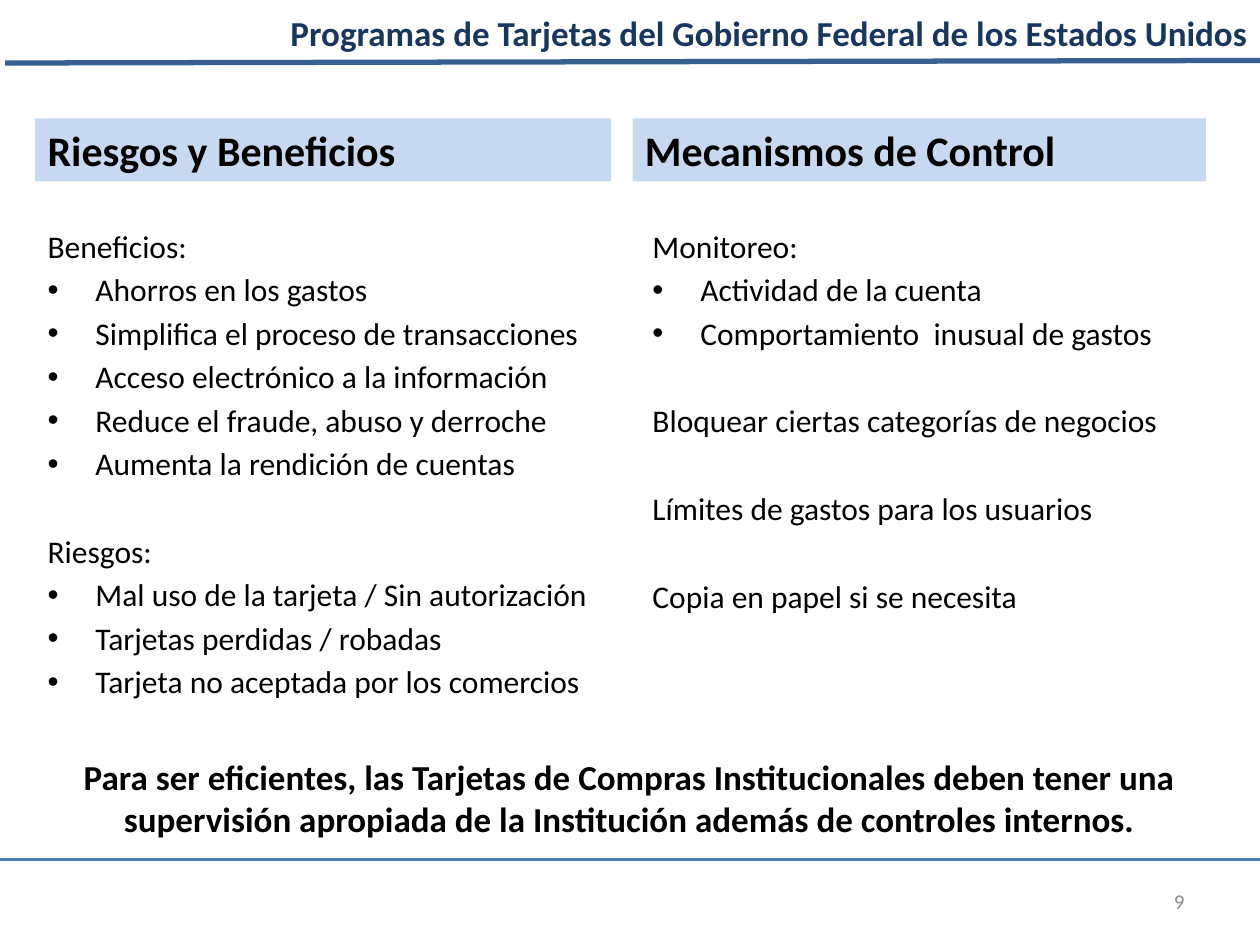
from dataclasses import dataclass

from lxml.etree import SubElement
from pptx import Presentation
from pptx.dml.color import RGBColor
from pptx.enum.shapes import MSO_CONNECTOR, MSO_SHAPE
from pptx.enum.text import MSO_ANCHOR, PP_ALIGN
from pptx.oxml.ns import qn
from pptx.util import Inches, Pt


@dataclass(frozen=True)
class Theme:
    font: str = "Calibri"
    text: str = "000000"
    title: str = "17375E"
    title_rule: str = "376092"
    footer_rule: str = "4B7EBC"
    band: str = "C6D9F1"
    page_number: str = "8C8C8C"
    heading_size: float = 24
    title_size: float = 20
    body_size: float = 18
    number_size: float = 12
    line_gap: float = 3.25
    group_gap: float = 28.45


THEME = Theme()

# Each group is an opening line and its bulleted items.
BENEFITS_AND_RISKS = [
    ("Beneficios:", [
        "Ahorros en los gastos",
        "Simplifica el proceso de transacciones",
        "Acceso electrónico a la información",
        "Reduce el fraude, abuso y derroche",
        "Aumenta la rendición de cuentas",
    ]),
    ("Riesgos:", [
        "Mal uso de la tarjeta / Sin autorización",
        "Tarjetas perdidas / robadas",
        "Tarjeta no aceptada por los comercios",
    ]),
]
CONTROLS = [
    ("Monitoreo:", ["Actividad de la cuenta", "Comportamiento  inusual de gastos"]),
    ("Bloquear ciertas categorías de negocios", []),
    ("Límites de gastos para los usuarios", []),
    ("Copia en papel si se necesita", []),
]


def add_run(paragraph, text, size, color=THEME.text, bold=False):
    run = paragraph.add_run()
    run.text = text
    run.font.name = THEME.font
    run.font.size = Pt(size)
    run.font.bold = bold
    run.font.color.rgb = RGBColor.from_string(color)


def add_text(slide, box, text, size, color=THEME.text, bold=False,
             alignment=PP_ALIGN.LEFT, anchor=MSO_ANCHOR.TOP):
    frame = slide.shapes.add_textbox(*map(Inches, box)).text_frame
    frame.word_wrap = True
    frame.vertical_anchor = anchor
    paragraph = frame.paragraphs[0]
    paragraph.alignment = alignment
    add_run(paragraph, text, size, color, bold)


def add_rule(slide, start, end, color, width):
    connector = slide.shapes.add_connector(
        MSO_CONNECTOR.STRAIGHT, *map(Inches, (*start, *end)))
    connector.line.color.rgb = RGBColor.from_string(color)
    connector.line.width = Pt(width)
    SubElement(connector._element.spPr, qn("a:effectLst"))


def add_bullet(paragraph):
    properties = paragraph._p.get_or_add_pPr()
    properties.set("marL", str(Inches(0.38)))
    properties.set("indent", str(-Inches(0.38)))
    SubElement(properties, qn("a:buFont"), typeface="Arial")
    SubElement(properties, qn("a:buChar"), char="•")


def add_heading(slide, box, text):
    band = slide.shapes.add_shape(MSO_SHAPE.RECTANGLE, *map(Inches, box))
    band.shadow.inherit = False
    band.fill.solid()
    band.fill.fore_color.rgb = RGBColor.from_string(THEME.band)
    band.line.fill.background()
    frame = band.text_frame
    frame.word_wrap = True
    frame.vertical_anchor = MSO_ANCHOR.TOP
    paragraph = frame.paragraphs[0]
    paragraph.alignment = PP_ALIGN.LEFT
    add_run(paragraph, text, THEME.heading_size, bold=True)


def add_groups(slide, box, groups):
    """Write every group into one text box, set apart by paragraph spacing."""
    frame = slide.shapes.add_textbox(*map(Inches, box)).text_frame
    frame.word_wrap = True
    for group_index, (opening, items) in enumerate(groups):
        if group_index == 0:
            paragraph = frame.paragraphs[0]
        else:
            paragraph = frame.add_paragraph()
            paragraph.space_before = Pt(THEME.group_gap)
        add_run(paragraph, opening, THEME.body_size)
        for item in items:
            paragraph = frame.add_paragraph()
            paragraph.space_before = Pt(THEME.line_gap)
            add_bullet(paragraph)
            add_run(paragraph, item, THEME.body_size)


def add_header(slide, box):
    left, top, width, height = box
    add_text(slide, box,
             "Programas de Tarjetas del Gobierno Federal de los Estados Unidos",
             THEME.title_size, THEME.title, True, PP_ALIGN.RIGHT)
    add_rule(slide, (left + 0.04, top + height + 0.02),
             (left + width, top + height), THEME.title_rule, 3)


def add_column(slide, box, heading, groups, body_offset):
    left, top, width, height = box
    add_heading(slide, (left, top, width, 0.5), heading)
    add_groups(slide, (left + body_offset, top + 0.81, width + 0.07, height - 0.81), groups)


def add_footer(slide, box):
    left, top, width, height = box
    add_rule(slide, (left, top), (left + width, top), THEME.footer_rule, 1.5)
    add_text(slide, (left + width - 2.83, top + 0.13, 2.33, 0.4), "9",
             THEME.number_size, THEME.page_number,
             alignment=PP_ALIGN.RIGHT, anchor=MSO_ANCHOR.MIDDLE)


def main():
    presentation = Presentation()
    presentation.slide_width = Inches(10)
    presentation.slide_height = Inches(7.5)
    slide = presentation.slides.add_slide(presentation.slide_layouts[6])

    add_header(slide, (0, 0.04, 10, 0.44))
    add_column(slide, (0.28, 0.94, 4.57, 4.86), "Riesgos y Beneficios",
               BENEFITS_AND_RISKS, body_offset=0)
    add_column(slide, (5.02, 0.94, 4.55, 4.86), "Mecanismos de Control",
               CONTROLS, body_offset=0.06)
    add_text(slide, (0.43, 5.95, 9.13, 0.77),
             "Para ser eficientes, las Tarjetas de Compras Institucionales deben tener una "
             "supervisión apropiada de la Institución además de controles internos.",
             THEME.title_size, bold=True, alignment=PP_ALIGN.CENTER)
    add_footer(slide, (0, 6.82, 10, 0.68))

    presentation.save("out.pptx")


if __name__ == "__main__":
    main()
